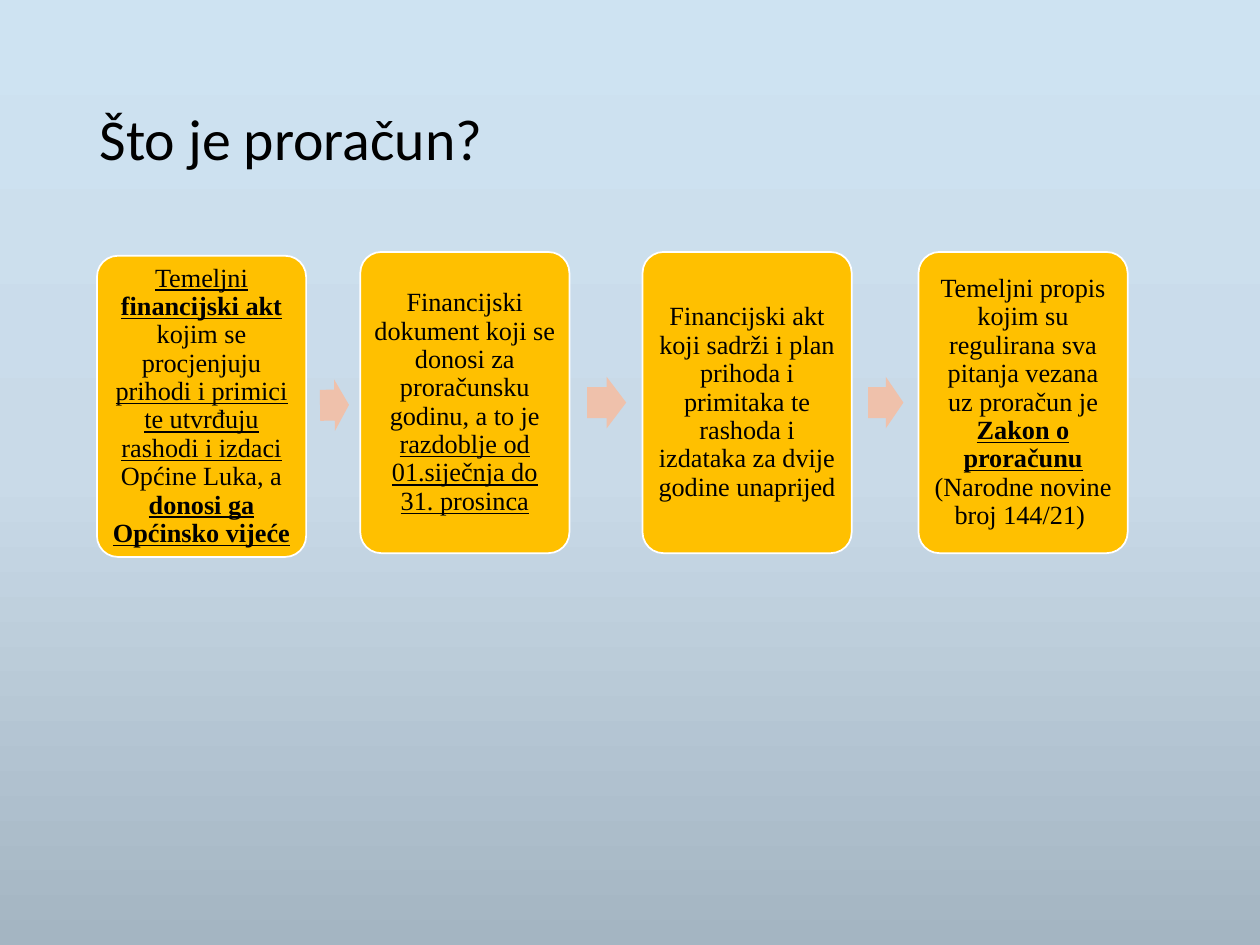
from copy import deepcopy

from pptx import Presentation
from pptx import util as u
from pptx.dml.color import RGBColor
from pptx.enum import shapes, text
from pptx.oxml.ns import qn

WIDTH, HEIGHT = u.Inches(10), u.Inches(7.5)
BLACK = RGBColor(0x00, 0x00, 0x00)
WHITE = RGBColor(0xFF, 0xFF, 0xFF)
AMBER = RGBColor(0xFF, 0xC0, 0x00)
PEACH = RGBColor(0xEF, 0xC1, 0xAB)
SKY = [
    (0, RGBColor(0xCE, 0xE3, 0xF2)),
    (0.5, RGBColor(0xC9, 0xDA, 0xE8)),
    (1, RGBColor(0xA4, 0xB5, 0xC2)),
]

CARD_WIDTH, CARD_HEIGHT, CARD_TOP = 1.66, 2.39, 2
ARROW_HEIGHT = 0.41
PLAIN, LINED, STRONG = (False, False), (False, True), (True, True)

CARDS = [
    (0.77, 0.03, [
        ("Temeljni ", LINED),
        ("financijski akt ", STRONG),
        ("kojim se procjenjuju ", PLAIN),
        ("prihodi i primici te utvrđuju rashodi i izdaci ", LINED),
        ("Općine Luka, a ", PLAIN),
        ("donosi ga Općinsko vijeće", STRONG),
    ]),
    (2.86, 0, [
        ("Financijski dokument koji se donosi za proračunsku godinu, a to je ", PLAIN),
        ("razdoblje od 01.siječnja do 31. prosinca", LINED),
    ]),
    (5.1, 0, [
        ("Financijski akt koji sadrži i plan prihoda i primitaka te rashoda "
         "i izdataka za dvije godine unaprijed", PLAIN),
    ]),
    (7.29, 0, [
        ("Temeljni propis kojim su regulirana sva pitanja vezana uz proračun je ", PLAIN),
        ("Zakon o proračunu ", STRONG),
        ("(Narodne novine broj 144/21) ", PLAIN),
    ]),
]
ARROWS = [(2.54, 0.02, 0.23, 359), (4.66, 0, 0.31, 0), (6.89, 0, 0.28, 0)]


def paint_background(slide):
    fill = slide.background.fill
    fill.gradient()
    fill.gradient_angle = 270
    stop_list = next(slide.element.iter(qn("a:gsLst")))
    stop_list.append(deepcopy(stop_list[0]))
    for stop, (position, color) in zip(fill.gradient_stops, SKY):
        stop.position = position
        stop.color.rgb = color


def add_run(paragraph, words, font_name, size, style=PLAIN):
    run = paragraph.add_run()
    run.text = words
    font = run.font
    font.name, font.size = font_name, u.Pt(size)
    font.bold, font.underline = style
    font.color.rgb = BLACK


def add_title(slide, words):
    title = slide.shapes.title
    title.left, title.top = u.Inches(0.69), u.Inches(0.4)
    title.width, title.height = u.Inches(8.62), u.Inches(1.45)
    frame = title.text_frame
    frame.auto_size = text.MSO_AUTO_SIZE.NONE
    frame.vertical_anchor = text.MSO_ANCHOR.MIDDLE
    paragraph = frame.paragraphs[0]
    paragraph.alignment = text.PP_ALIGN.LEFT
    paragraph.line_spacing = 0.9
    add_run(paragraph, words, "Calibri", 33)


def add_block(slide, kind, left, top, width, height, color):
    shape = slide.shapes.add_shape(kind, *map(u.Inches, (left, top, width, height)))
    shape.shadow.inherit = False
    shape.fill.solid()
    shape.fill.fore_color.rgb = color
    return shape


def add_card(slide, left, drop, runs):
    card = add_block(slide, shapes.MSO_SHAPE.ROUNDED_RECTANGLE,
                     left, CARD_TOP + drop, CARD_WIDTH, CARD_HEIGHT, AMBER)
    card.adjustments[0] = 0.1
    card.line.color.rgb = WHITE
    card.line.width = u.Pt(1)
    frame = card.text_frame
    frame.word_wrap = True
    frame.vertical_anchor = text.MSO_ANCHOR.MIDDLE
    frame.margin_left = frame.margin_right = u.Inches(0.06)
    frame.margin_top = frame.margin_bottom = u.Inches(0.06)
    paragraph = frame.paragraphs[0]
    paragraph.alignment = text.PP_ALIGN.CENTER
    paragraph.line_spacing = 0.9
    for words, style in runs:
        add_run(paragraph, words, "Times New Roman", 15, style)


def add_arrow(slide, left, drop, width, rotation):
    top = CARD_TOP + (CARD_HEIGHT - ARROW_HEIGHT) / 2 + drop
    arrow = add_block(slide, shapes.MSO_SHAPE.RIGHT_ARROW,
                      left, top, width, ARROW_HEIGHT, PEACH)
    arrow.adjustments[0], arrow.adjustments[1] = 0.6, 0.5
    arrow.rotation = rotation
    arrow.line.fill.background()


def main():
    presentation = Presentation()
    presentation.slide_width, presentation.slide_height = WIDTH, HEIGHT
    slide = presentation.slides.add_slide(presentation.slide_layouts[5])
    paint_background(slide)
    add_title(slide, "Što je proračun?")
    for card in CARDS:
        add_card(slide, *card)
    for arrow in ARROWS:
        add_arrow(slide, *arrow)
    presentation.save("out.pptx")


if __name__ == "__main__":
    main()
